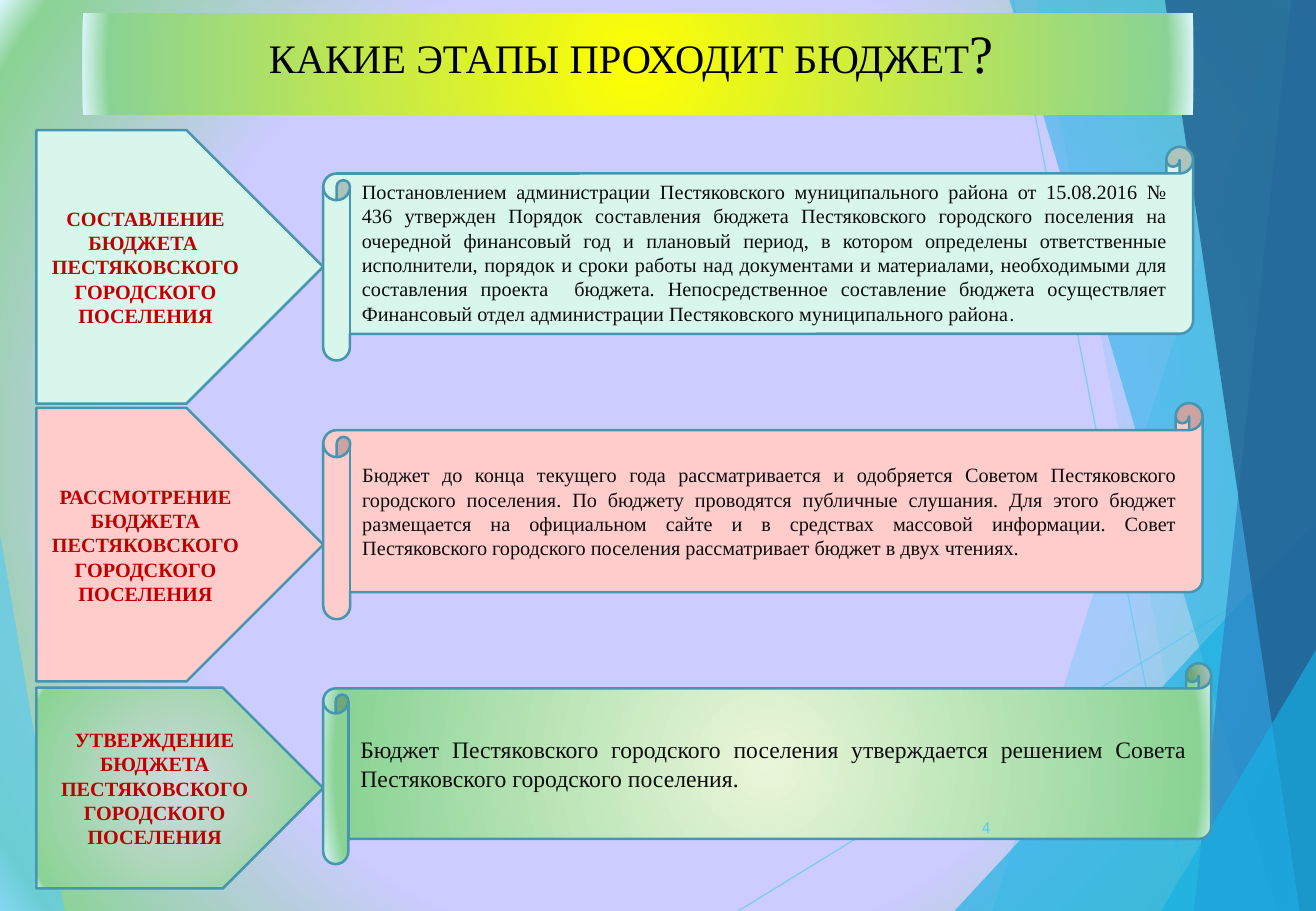
import pptx
import pptx.dml.color
import pptx.enum.shapes
import pptx.enum.text
import pptx.oxml.ns
import pptx.util
from lxml import etree

Cm = pptx.util.Cm
RGBColor = pptx.dml.color.RGBColor
Shape = pptx.enum.shapes.MSO_SHAPE
Align = pptx.enum.text.PP_ALIGN
Anchor = pptx.enum.text.MSO_ANCHOR
qn = pptx.oxml.ns.qn

WIDE, HIGH = 27.52, 19.05
SERIF, SANS = "Times New Roman", "Roboto"
BLACK = RGBColor(0x00, 0x00, 0x00)
INK = RGBColor(0x0D, 0x0D, 0x0D)
RED = RGBColor(0xC0, 0x00, 0x00)
MINT = RGBColor(0xD9, 0xF6, 0xEC)
PINK = RGBColor(0xFF, 0xCC, 0xCC)
LILAC = RGBColor(0xCC, 0xCC, 0xFF)
YELLOW = RGBColor(0xFF, 0xFF, 0x00)
GREY = RGBColor(0xCF, 0xDA, 0xDF)
LIME = RGBColor(0xEA, 0xF6, 0xD9)
GREEN = RGBColor(0x8A, 0xD3, 0x94)
ICE = RGBColor(0xDD, 0xF6, 0xFE)
EDGE = RGBColor(0x46, 0x96, 0xB1)
SKY = RGBColor(0x5F, 0xCB, 0xEF)
AZURE = RGBColor(0x17, 0xB0, 0xE4)
BLUE = RGBColor(0x2E, 0x83, 0xC3)
NAVY = RGBColor(0x22, 0x62, 0x92)

COMPOSE = (
    "Постановлением администрации Пестяковского муниципального района от "
    "15.08.2016 № 436 утвержден Порядок составления бюджета Пестяковского "
    "городского поселения на очередной финансовый год и плановый период, в "
    "котором определены ответственные исполнители, порядок и сроки работы над "
    "документами и материалами, необходимыми для составления проекта  бюджета. "
    "Непосредственное составление бюджета осуществляет Финансовый отдел "
    "администрации Пестяковского муниципального района")
REVIEW = (
    "Бюджет до конца текущего года рассматривается и одобряется Советом "
    "Пестяковского городского поселения. По бюджету проводятся публичные "
    "слушания. Для этого бюджет размещается на официальном сайте и в средствах "
    "массовой информации. Совет Пестяковского городского поселения "
    "рассматривает бюджет в двух чтениях.")
APPROVE = (
    "Бюджет Пестяковского городского поселения утверждается решением Совета "
    "Пестяковского городского поселения.")


def write(shape, text, *, size=12, color=INK, font=SERIF, bold=False,
          align=Align.CENTER, anchor=Anchor.MIDDLE):
    """Add a run to the last paragraph of the shape."""
    frame = shape.text_frame
    frame.word_wrap = True
    frame.vertical_anchor = anchor
    para = frame.paragraphs[-1]
    para.alignment = align
    run = para.add_run()
    run.text = text
    run.font.size = pptx.util.Pt(size)
    run.font.name = font
    run.font.bold = bold
    run.font.color.rgb = color


def fade(element, share):
    """Give the first colour in the element an opacity in percent."""
    tint = next(element.iter(qn("a:srgbClr")))
    etree.SubElement(tint, qn("a:alpha"), val=str(share * 1000))


def glow(fill, owner, core, start=0):
    """Fill with a round gradient that runs from core to a pale rim."""
    fill.gradient()
    grad = next(owner.element.iter(qn("a:gradFill")))
    for child in list(grad):
        grad.remove(child)
    stops = etree.SubElement(grad, qn("a:gsLst"))
    for spot, color in ((start, core), (95, GREEN), (100, ICE)):
        stop = etree.SubElement(stops, qn("a:gs"), pos=str(spot * 1000))
        etree.SubElement(stop, qn("a:srgbClr"), val=str(color))
    ring = etree.SubElement(grad, qn("a:path"), path="circle")
    etree.SubElement(ring, qn("a:fillToRect"),
                     {side: "50000" for side in "ltrb"})


class Deck:
    """Holds the slide and the style of its parts."""

    def __init__(self):
        self.show = pptx.Presentation()
        self.show.slide_width, self.show.slide_height = Cm(WIDE), Cm(HIGH)
        self.slide = self.show.slides.add_slide(self.show.slide_layouts[5])
        self.shapes = self.slide.shapes
        glow(self.slide.background.fill, self.slide, LILAC, 62)

    def facet(self, points, color, share):
        points = [(Cm(x), Cm(y)) for x, y in points]
        form = self.shapes.build_freeform(*points[0])
        form.add_line_segments(points[1:])
        shape = form.convert_to_shape()
        shape.shadow.inherit = False
        shape.fill.solid()
        shape.fill.fore_color.rgb = color
        shape.line.fill.background()
        fade(shape.element, share)

    def band(self, top, foot, color, share):
        """Facet between a slanted line and the right edge of the slide."""
        self.facet([(top, 0), (foot, HIGH), (WIDE, HIGH), (WIDE, 0)],
                   color, share)

    def wedge(self, foot, rise, color, share):
        """Triangle in the lower right corner."""
        self.facet([(foot, HIGH), (WIDE, rise), (WIDE, HIGH)], color, share)

    def ray(self, *ends):
        line = self.shapes.add_connector(
            pptx.enum.shapes.MSO_CONNECTOR.STRAIGHT, *map(Cm, ends))
        line.line.width = pptx.util.Pt(0.75)
        line.line.color.rgb = SKY
        fade(line.element, 70)
        etree.SubElement(line.element.find(qn("p:spPr")), qn("a:effectLst"))

    def title(self, text, mark, box):
        """Place the title in front of the facets, with a larger end mark."""
        head = self.shapes.title
        head.element.getparent().append(head.element)
        head.left, head.top, head.width, head.height = map(Cm, box)
        glow(head.fill, head, YELLOW)
        write(head, text, size=24, color=BLACK, anchor=Anchor.TOP)
        write(head, mark, size=32, color=BLACK, anchor=Anchor.TOP)
        head.text_frame.auto_size = (
            pptx.enum.text.MSO_AUTO_SIZE.SHAPE_TO_FIT_TEXT)

    def panel(self, kind, box, color, round_fill):
        shape = self.shapes.add_shape(kind, *map(Cm, box))
        shape.shadow.inherit = False
        if round_fill:
            glow(shape.fill, shape, color)
        else:
            shape.fill.solid()
            shape.fill.fore_color.rgb = color
        shape.line.color.rgb = EDGE
        shape.line.width = pptx.util.Pt(1.5)
        return shape

    def stage(self, top, tall, color, text, round_fill=False):
        plate = self.panel(Shape.PENTAGON, (0.76, top, 6, tall),
                           color, round_fill)
        write(plate, text, color=RED, bold=True)
        if "РАССМОТРЕНИЕ" not in text:
            return
        plate.text_frame.add_paragraph()
        write(plate, "ПЕСТЯКОВСКОГО ГОРОДСКОГО ПОСЕЛЕНИЯ",
              color=RED, bold=True)

    def scroll(self, top, wide, tall, color, text, round_fill=False, **style):
        roll = self.panel(Shape.HORIZONTAL_SCROLL, (6.76, top, wide, tall),
                          color, round_fill)
        write(roll, text, align=Align.JUSTIFY, **style)
        return roll

    def label(self, text, box, **style):
        write(self.shapes.add_textbox(*map(Cm, box)), text, **style)


def main():
    deck = Deck()
    deck.facet([(0, 11.15), (1.35, HIGH), (0, HIGH)], SKY, 70)
    deck.ray(15.44, HIGH, WIDE, 11.61)
    deck.ray(21.18, 0, 24.87, HIGH)
    deck.band(26.82, 20.75, SKY, 36)
    deck.band(21.69, 25.3, SKY, 20)
    deck.wedge(19.96, 10.9, AZURE, 66)
    deck.band(21.11, 26.7, AZURE, 50)
    deck.band(27, 24.97, BLUE, 70)
    deck.band(24.36, 27.18, NAVY, 82)
    deck.wedge(24.28, 13.59, AZURE, 66)

    deck.title("КАКИЕ ЭТАПЫ ПРОХОДИТ БЮДЖЕТ", "? ", (1.73, 0.28, 23.22, 1.63))

    place = " ПЕСТЯКОВСКОГО ГОРОДСКОГО ПОСЕЛЕНИЯ"
    deck.stage(2.72, 5.72, MINT, "СОСТАВЛЕНИЕ БЮДЖЕТА " + place)
    deck.stage(8.53, 5.72, PINK, "РАССМОТРЕНИЕ БЮДЖЕТА")
    deck.stage(14.38, 4.2, GREY, "УТВЕРЖДЕНИЕ БЮДЖЕТА" + place, True)

    first = deck.scroll(3.07, 18.19, 4.47, MINT, COMPOSE, anchor=Anchor.TOP)
    write(first, ".", font=SANS, align=Align.JUSTIFY, anchor=Anchor.TOP)
    deck.scroll(8.43, 18.39, 4.52, PINK, REVIEW)
    deck.scroll(13.87, 18.57, 4.2, LIME, APPROVE, True, size=14)

    deck.label("4", (19.41, 16.79, 1.55, 1.02), size=9, font=SANS,
               color=SKY, align=Align.RIGHT)
    deck.show.save("out.pptx")


if __name__ == "__main__":
    main()
